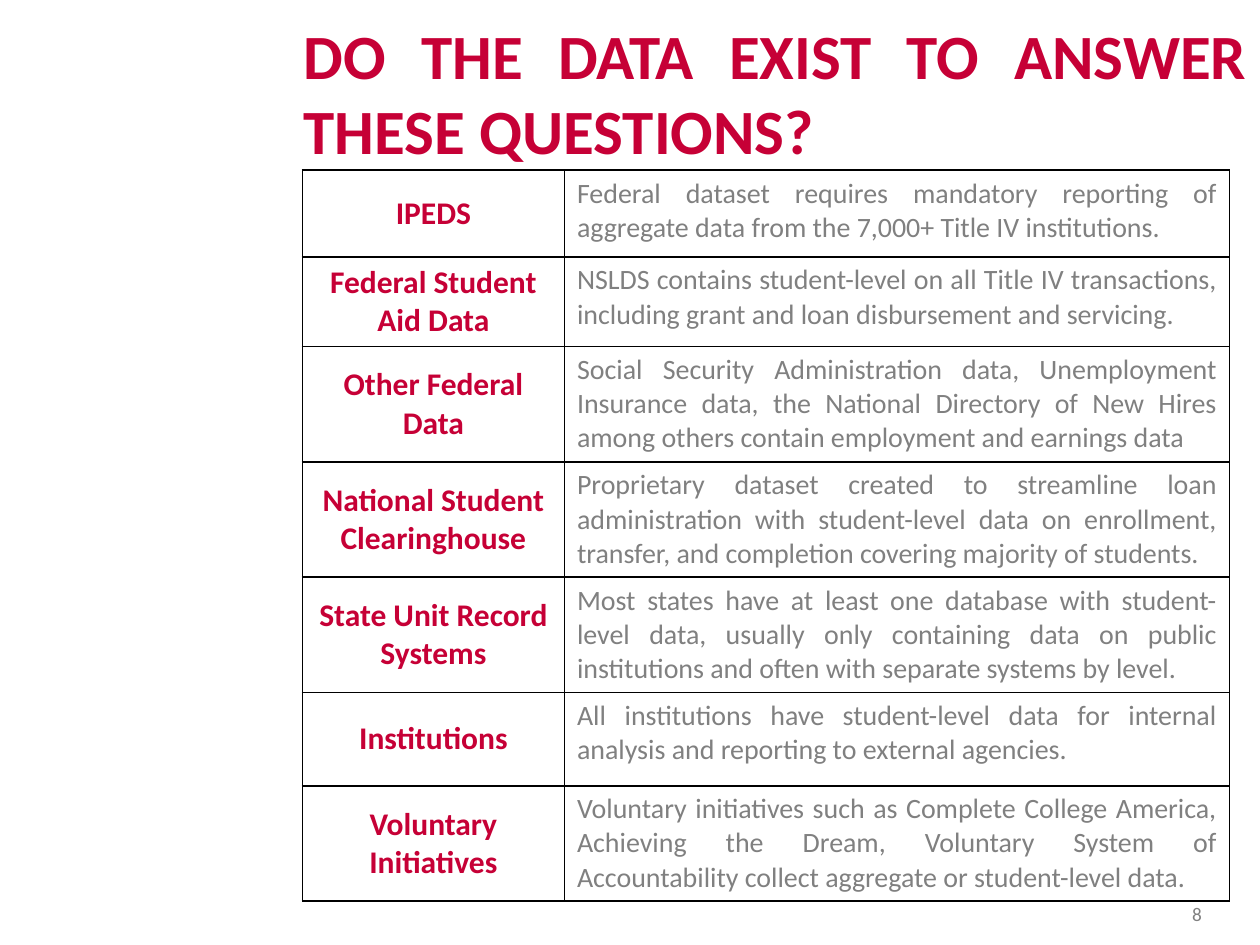
from lxml import etree
from pptx import Presentation
from pptx.dml.color import RGBColor
from pptx.enum.text import MSO_ANCHOR, MSO_AUTO_SIZE, PP_ALIGN
from pptx.oxml.ns import qn
from pptx.util import Inches, Pt

TOP, MIDDLE = MSO_ANCHOR.TOP, MSO_ANCHOR.MIDDLE
CENTER, JUSTIFY = PP_ALIGN.CENTER, PP_ALIGN.JUSTIFY
NO_AUTOFIT = MSO_AUTO_SIZE.NONE
TITLE_ONLY = 5

CRIMSON, GRAY, WHITE, BLACK = "C60036", "808080", "FFFFFF", "000000"
TITLE_FORMAT = {"name": "Calibri", "size": Pt(36), "bold": True}
SOURCE_FORMAT = {"name": "Calibri", "size": Pt(18), "bold": True}
DESCRIPTION_FORMAT = {"name": "Calibri", "size": Pt(16), "bold": False}
NUMBER_FORMAT = {"name": "Calibri", "size": Pt(11), "bold": False}

TITLE_BOX = (2.31, 0.03, 7.69, 1.4)
TABLE_BOX = (2.4, 1.35, 7.36, 5.74)
NUMBER_BOX = (9, 7, 1, 0.5)
SOURCE_COLUMN = 2.08
ROW_HEIGHTS = (0.69, 0.7, 0.9, 0.9, 0.9, 0.74, 0.9)

DATA_SOURCES = (
    ("IPEDS",
     "Federal dataset requires mandatory reporting of aggregate data from "
     "the 7,000+ Title IV institutions."),
    ("Federal Student Aid Data",
     "NSLDS contains student-level on all Title IV transactions, including "
     "grant and loan disbursement and servicing."),
    ("Other Federal Data",
     "Social Security Administration data, Unemployment Insurance data, the "
     "National Directory of New Hires among others contain employment and "
     "earnings data"),
    ("National Student Clearinghouse",
     "Proprietary dataset created to streamline loan administration with "
     "student-level data on enrollment, transfer, and completion covering "
     "majority of students."),
    ("State Unit Record Systems",
     "Most states have at least one database with student-level data, usually "
     "only containing data on public institutions and often with separate "
     "systems by level."),
    ("Institutions",
     "All institutions have student-level data for internal analysis and "
     "reporting to external agencies."),
    ("Voluntary Initiatives",
     "Voluntary initiatives such as Complete College America, Achieving the "
     "Dream, Voluntary System of Accountability collect aggregate or "
     "student-level data."),
)


def color(value):
    """Turn a hex string into a colour."""
    return RGBColor.from_string(value)


def write_text(text_frame, text, alignment, hex_color, font_format):
    """Write one formatted paragraph into a text frame."""
    text_frame.word_wrap = True
    paragraph = text_frame.paragraphs[0]
    paragraph.alignment = alignment
    run = paragraph.add_run()
    run.text = text
    for name, value in font_format.items():
        setattr(run.font, name, value)
    run.font.color.rgb = color(hex_color)


def add_borders(cell, hex_color, width):
    """Draw a solid line on all four sides of a cell."""
    properties = cell._tc.get_or_add_tcPr()
    for position, side in enumerate(("a:lnL", "a:lnR", "a:lnT", "a:lnB")):
        line = etree.Element(qn(side), w=str(width))
        fill = etree.SubElement(line, qn("a:solidFill"))
        etree.SubElement(fill, qn("a:srgbClr"), val=hex_color)
        properties.insert(position, line)


def place_title(slide, box):
    """Place the heading in its box."""
    title = slide.shapes.title
    title.left, title.top, title.width, title.height = map(Inches, box)
    title.text_frame.auto_size = NO_AUTOFIT
    title.text_frame.vertical_anchor = MIDDLE
    write_text(title.text_frame, "DO THE DATA EXIST TO ANSWER THESE QUESTIONS?",
               JUSTIFY, CRIMSON, TITLE_FORMAT)


def place_sources_table(slide, box):
    """Place the table of data sources and their descriptions."""
    table = slide.shapes.add_table(len(DATA_SOURCES), 2, *map(Inches, box)).table
    table.first_row = table.horz_banding = False
    widths = (SOURCE_COLUMN, box[2] - SOURCE_COLUMN)
    for column, width in zip(table.columns, widths):
        column.width = Inches(width)
    styles = ((MIDDLE, CENTER, CRIMSON, SOURCE_FORMAT),
              (TOP, JUSTIFY, GRAY, DESCRIPTION_FORMAT))
    for row, height, texts in zip(table.rows, ROW_HEIGHTS, DATA_SOURCES):
        row.height = Inches(height)
        for cell, text, (anchor, *text_style) in zip(row.cells, texts, styles):
            cell.vertical_anchor = anchor
            cell.fill.solid()
            cell.fill.fore_color.rgb = color(WHITE)
            add_borders(cell, BLACK, Pt(1))
            write_text(cell.text_frame, text, *text_style)


def place_slide_number(slide, box):
    """Place the slide number in its box."""
    text_frame = slide.shapes.add_textbox(*map(Inches, box)).text_frame
    text_frame.vertical_anchor = MIDDLE
    write_text(text_frame, "8", CENTER, GRAY, NUMBER_FORMAT)


def main():
    """Build and save the slide."""
    presentation = Presentation()
    presentation.slide_width, presentation.slide_height = Inches(10), Inches(7.5)
    slide = presentation.slides.add_slide(presentation.slide_layouts[TITLE_ONLY])
    place_title(slide, TITLE_BOX)
    place_sources_table(slide, TABLE_BOX)
    place_slide_number(slide, NUMBER_BOX)
    presentation.save("out.pptx")


if __name__ == "__main__":
    main()
